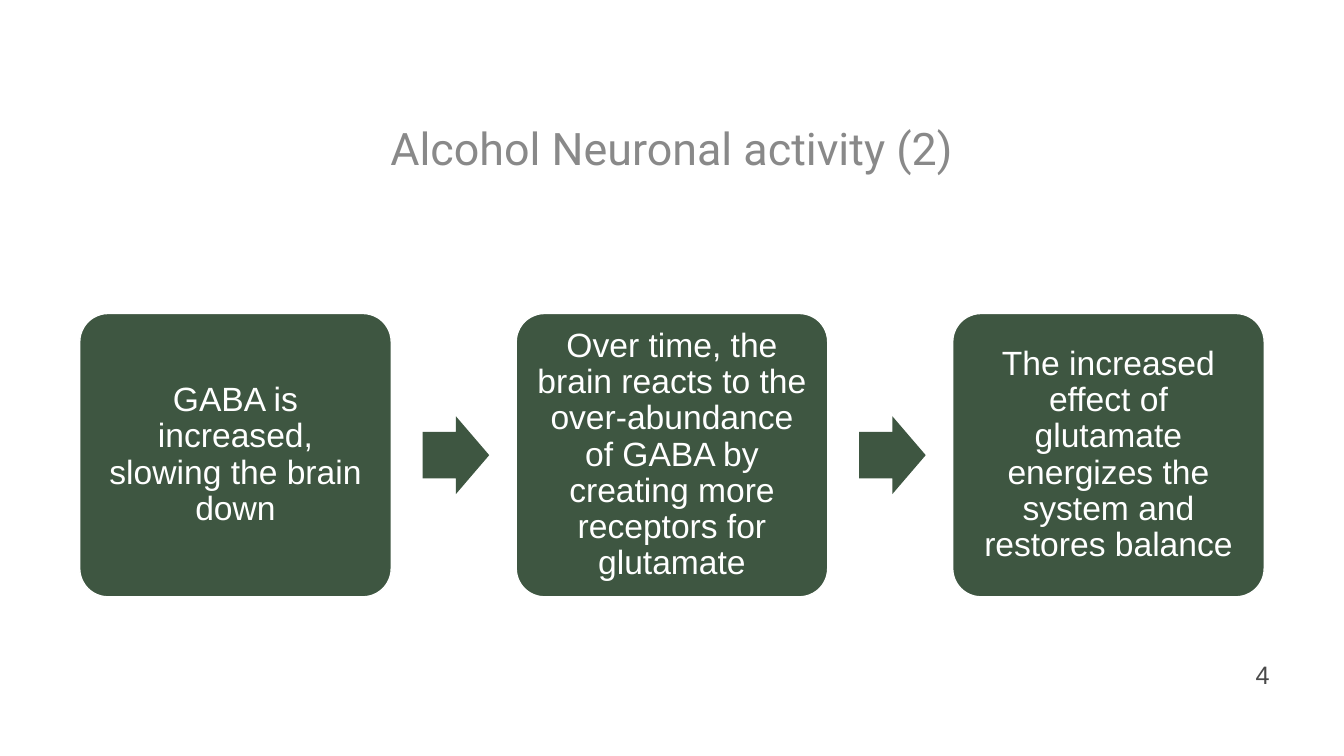
from dataclasses import dataclass

from pptx import Presentation
from pptx.dml.color import RGBColor
from pptx.enum.shapes import MSO_SHAPE
from pptx.enum.text import MSO_ANCHOR, PP_ALIGN
from pptx.shapes.autoshape import Shape
from pptx.slide import Slide
from pptx.util import Cm, Pt

GREEN = RGBColor(0x3E, 0x56, 0x41)
WHITE = RGBColor(0xFF, 0xFF, 0xFF)
TITLE_GRAY = RGBColor(0x89, 0x89, 0x89)
NUMBER_GRAY = RGBColor(0x49, 0x49, 0x49)

# Flow layout, in centimetres
FLOW_LEFT, FLOW_TOP = 2.01, 7.9
STEP_W, STEP_H = 7.85, 7.14
PITCH = 11.0
ARROW_W, ARROW_H = 1.68, 1.96
ARROW_OFFSET = 8.64


@dataclass
class Step:
    text: str
    index: int

    @property
    def left(self) -> float:
        return FLOW_LEFT + self.index * PITCH


STEPS = [Step(text, i) for i, text in enumerate([
    "GABA is increased, slowing the brain down",
    "Over time, the brain reacts to the over-abundance of GABA "
    "by creating more receptors for glutamate",
    "The increased effect of glutamate energizes the system "
    "and restores balance",
])]


def write(s: Shape, text: str, *, size: float, color: RGBColor,
          font: str = "Arial", spacing: float = 0.9) -> None:
    """Put one centred paragraph in the middle of a shape."""
    tf = s.text_frame
    tf.word_wrap = True
    tf.vertical_anchor = MSO_ANCHOR.MIDDLE
    tf.margin_left = tf.margin_right = Cm(0.25)
    tf.margin_top = tf.margin_bottom = Cm(0.25)
    p = tf.paragraphs[0]
    p.alignment = PP_ALIGN.CENTER
    p.line_spacing = spacing
    r = p.add_run()
    r.text = text
    r.font.name = font
    r.font.size = Pt(size)
    r.font.color.rgb = color


def add_block(slide: Slide, kind: MSO_SHAPE, left: float, top: float,
              width: float, height: float, adjustments: list[float]) -> Shape:
    """Add a green preset shape without an outline."""
    s = slide.shapes.add_shape(kind, Cm(left), Cm(top), Cm(width), Cm(height))
    s.shadow.inherit = False
    s.fill.solid()
    s.fill.fore_color.rgb = GREEN
    s.line.fill.background()
    for i, value in enumerate(adjustments):
        s.adjustments[i] = value
    return s


def add_step(slide: Slide, step: Step) -> None:
    s = add_block(slide, MSO_SHAPE.ROUNDED_RECTANGLE, step.left, FLOW_TOP,
                  STEP_W, STEP_H, [0.1])
    s.line.color.rgb = WHITE
    s.line.width = Pt(1)
    write(s, step.text, size=24, color=WHITE)


def add_arrow(slide: Slide, step: Step) -> None:
    add_block(slide, MSO_SHAPE.RIGHT_ARROW, step.left + ARROW_OFFSET,
              FLOW_TOP + (STEP_H - ARROW_H) / 2, ARROW_W, ARROW_H, [0.6, 0.5])


def main() -> None:
    prs = Presentation()
    prs.slide_width, prs.slide_height = Cm(33.87), Cm(19.05)
    slide = prs.slides.add_slide(prs.slide_layouts[6])

    # Title
    s = slide.shapes.add_textbox(Cm(2.54), Cm(2.54), Cm(28.78), Cm(2.54))
    write(s, "Alcohol Neuronal activity (2)", size=32, color=TITLE_GRAY,
          font="Roboto")

    # Steps, with an arrow after each but the last
    for step in STEPS:
        add_step(slide, step)
        if step is not STEPS[-1]:
            add_arrow(slide, step)

    # Slide number
    s = slide.shapes.add_textbox(Cm(31.12), Cm(16.48), Cm(1.4), Cm(1.02))
    write(s, "4", size=18, color=NUMBER_GRAY, spacing=1.0)

    prs.save("out.pptx")


if __name__ == "__main__":
    main()
